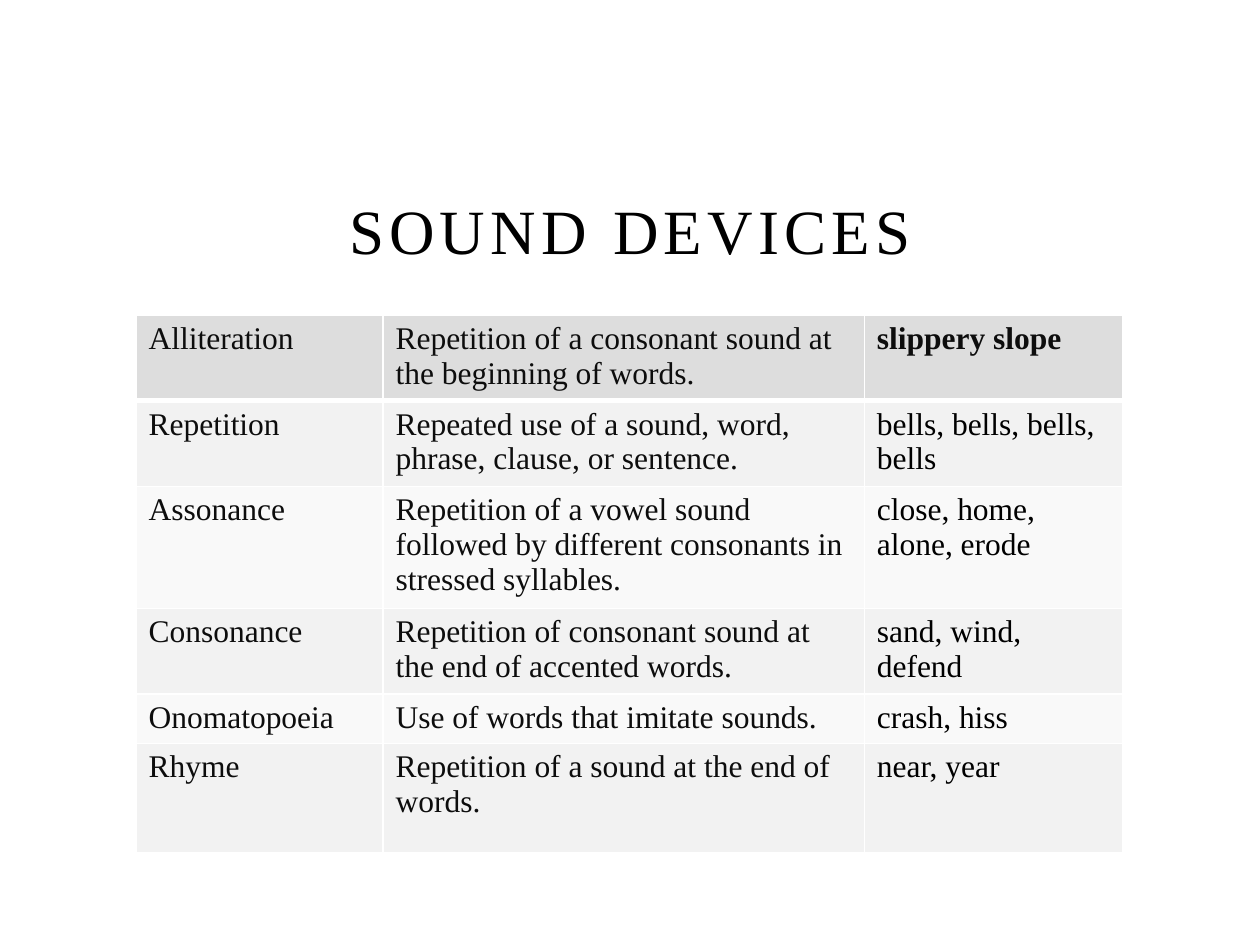
import pptx
import pptx.dml.color
import pptx.enum.text
import pptx.oxml.ns
import pptx.util
from lxml import etree

FONT = "Times New Roman"
TITLE = "SOUND DEVICES"
# Device, definition, example
DEVICES = [
    ("Alliteration", "Repetition of a consonant sound at the beginning of words.", "slippery slope"),
    ("Repetition", "Repeated use of a sound, word, phrase, clause, or sentence.", "bells, bells, bells, bells"),
    ("Assonance", "Repetition of a vowel sound followed by different consonants in stressed syllables.",
     "close, home, alone, erode"),
    ("Consonance", "Repetition of consonant sound at the end of accented words.", "sand, wind, defend"),
    ("Onomatopoeia", "Use of words that imitate sounds.", "crash, hiss"),
    ("Rhyme", "Repetition of a sound at the end of words.", "near, year"),
]
COLUMN_WIDTHS = [1.96, 3.82, 2.05]
ROW_HEIGHTS = [0.68, 0.68, 0.97, 0.68, 0.39, 0.87]
HEADER_FILL, BAND_FILLS = "DDDDDD", ("F9F9F9", "F2F2F2")
BLACK, DARK, WHITE = "000000", "0D0D0D", "FFFFFF"


def color(value):
    return pptx.dml.color.RGBColor.from_string(value)


def style_font(font, size, value, bold=False):
    font.name, font.size, font.bold = FONT, pptx.util.Pt(size), bold
    font.color.rgb = color(value)


def add_border(cell, side, points):
    """Append a white border; call before the cell's fill is set."""
    properties = cell._tc.get_or_add_tcPr()
    line = etree.SubElement(properties, pptx.oxml.ns.qn(f"a:ln{side}"), w=str(pptx.util.Pt(points)))
    fill = etree.SubElement(line, pptx.oxml.ns.qn("a:solidFill"))
    etree.SubElement(fill, pptx.oxml.ns.qn("a:srgbClr"), val=WHITE)


def add_title(slide):
    title = slide.shapes.title
    title.left, title.top, title.width, title.height = map(pptx.util.Inches, (1.5, 1.42, 7, 0.75))
    frame = title.text_frame
    frame.text = TITLE
    frame.vertical_anchor = pptx.enum.text.MSO_ANCHOR.BOTTOM
    paragraph = frame.paragraphs[0]
    paragraph.alignment = pptx.enum.text.PP_ALIGN.CENTER
    style_font(paragraph.font, 36, BLACK)
    paragraph.runs[0].font._element.set("spc", "300")


def add_device_table(slide):
    size = (sum(COLUMN_WIDTHS), sum(ROW_HEIGHTS))
    table = slide.shapes.add_table(len(DEVICES), len(COLUMN_WIDTHS),
                                   *map(pptx.util.Inches, (1.08, 2.5, *size))).table
    for column, width in zip(table.columns, COLUMN_WIDTHS):
        column.width = pptx.util.Inches(width)
    for row, height in zip(table.rows, ROW_HEIGHTS):
        row.height = pptx.util.Inches(height)

    for row_index, device in enumerate(DEVICES):
        is_header = row_index == 0
        for column_index, text in enumerate(device):
            cell = table.cell(row_index, column_index)
            cell.text = text
            is_example = column_index == 2
            style_font(cell.text_frame.paragraphs[0].font, 18,
                       BLACK if is_example and not is_header else DARK,
                       bold=is_example and is_header)
            for side in "LRTB":
                thick = (side == "B" and is_header) or (side == "T" and row_index == 1)
                add_border(cell, side, 3 if thick else 1)
            cell.fill.solid()
            cell.fill.fore_color.rgb = color(HEADER_FILL if is_header else BAND_FILLS[row_index % 2])


def main():
    presentation = pptx.Presentation()
    presentation.slide_width = pptx.util.Inches(10)
    presentation.slide_height = pptx.util.Inches(7.5)
    slide = presentation.slides.add_slide(presentation.slide_layouts[5])
    add_title(slide)
    add_device_table(slide)
    presentation.save("out.pptx")


if __name__ == "__main__":
    main()
